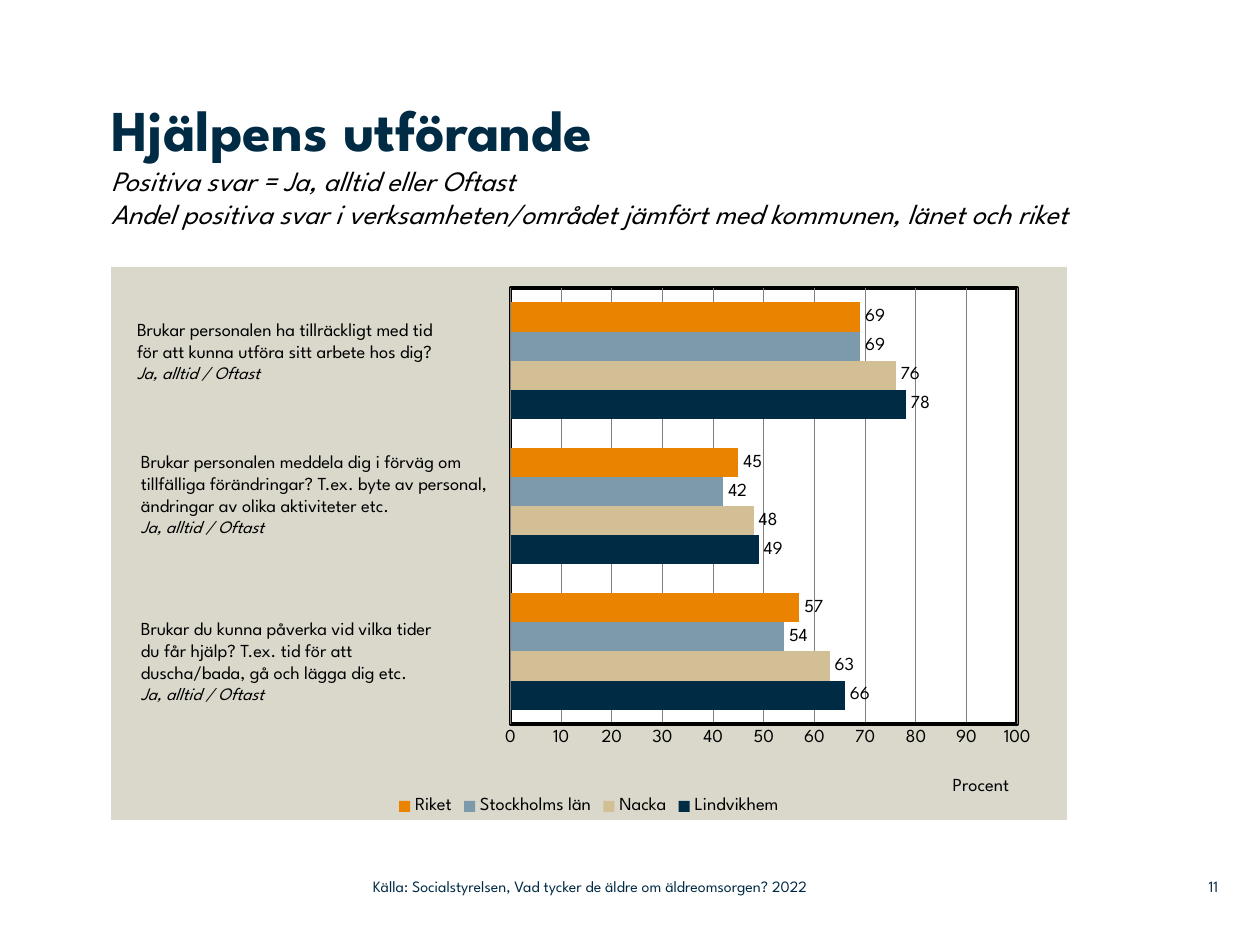
from lxml import etree
from pptx import Presentation
from pptx import util as u
from pptx.chart.data import CategoryChartData
from pptx.dml.color import RGBColor
from pptx.enum import chart as ch, text as t

PX = 914400 // 126
FONT = "League Spartan"
NAVY = RGBColor(0x00, 0x2B, 0x45)
BLACK = RGBColor(0, 0, 0)
GREY = RGBColor(0x80, 0x80, 0x80)
SAND = RGBColor(0xD3, 0xBF, 0x96)
BLUE = RGBColor(0x7D, 0x9A, 0xAA)
ORANGE = RGBColor(0xE9, 0x83, 0x00)
NS_C = "http://schemas.openxmlformats.org/drawingml/2006/chart"
NS_A = "http://schemas.openxmlformats.org/drawingml/2006/main"
C = "{%s}" % NS_C

deck = Presentation()
deck.slide_width, deck.slide_height = u.Inches(10), u.Inches(7.5)
slide = deck.slides.add_slide(deck.slide_layouts[6])


def put(lines, box, size=10.5, color=BLACK, pad=(0, 0), mid=False,
        right=False, first=None, last=None):
    """Add a text box; first and last override the format of those lines."""
    frame = slide.shapes.add_textbox(*[n * PX for n in box]).text_frame
    frame.word_wrap = True
    frame.margin_left = frame.margin_right = pad[0] * PX
    frame.margin_top = frame.margin_bottom = pad[1] * PX
    frame.vertical_anchor = t.MSO_ANCHOR.MIDDLE if mid else t.MSO_ANCHOR.TOP
    for i, line in enumerate(lines):
        para = frame.paragraphs[0] if i == 0 else frame.add_paragraph()
        para.alignment = t.PP_ALIGN.RIGHT if right else t.PP_ALIGN.LEFT
        look = {"size": u.Pt(size), "name": FONT}
        if i == 0:
            look.update(first or {})
        elif i == len(lines) - 1 or first:
            look.update(last or {})
        run = para.add_run()
        run.text = line
        for key, val in look.items():
            if key != "color":
                setattr(run.font, key, val)
        run.font.color.rgb = look.get("color", color)


def place(node, at, **spots):
    """Give a chart part a manual layout as shares of the chart."""
    for old in node.findall(C + "layout"):
        node.remove(old)
    layout = etree.Element(C + "layout")
    manual = etree.SubElement(layout, C + "manualLayout")
    for key, val in spots.items():
        etree.SubElement(manual, C + key).set("val", str(val))
    node.insert(at, layout)


# Heading
put(["Hjälpens utförande",
     "Positiva svar = Ja, alltid eller Oftast",
     "Andel positiva svar i verksamheten/området jämfört med kommunen, länet och riket"],
    (111, 94, 982, 153), size=16,
    first={"size": u.Pt(33), "bold": True, "color": NAVY},
    last={"italic": True})

# Chart data, listed from the bottom bar up
series = [
    ("Lindvikhem", (66, 49, 78), NAVY),
    ("Nacka", (63, 48, 76), SAND),
    ("Stockholms län", (54, 42, 69), BLUE),
    ("Riket", (57, 45, 69), ORANGE),
]
data = CategoryChartData()
data.categories = ["1", "2", "3"]
for name, vals, _ in series:
    data.add_series(name, vals)
chart = slide.shapes.add_chart(
    ch.XL_CHART_TYPE.BAR_CLUSTERED,
    *[n * PX for n in (111, 267, 956, 553)], data).chart
chart.has_title = False
chart.font.name, chart.font.size = FONT, u.Pt(10.5)
chart.font.color.rgb = BLACK

# Bars and their values
plot = chart.plots[0]
plot.gap_width, plot.overlap = 100, 0
plot.vary_by_categories = False
for bar, (_, _, color) in zip(plot.series, series):
    bar.format.fill.solid()
    bar.format.fill.fore_color.rgb = color
    tags = bar.data_labels
    tags.show_value = True
    tags.position = ch.XL_LABEL_POSITION.OUTSIDE_END
    tags.font.name, tags.font.size = FONT, u.Pt(10.5)
    tags.font.color.rgb = BLACK

# Axes
chart.category_axis.visible = False
axis = chart.value_axis
axis.minimum_scale, axis.maximum_scale, axis.major_unit = 0, 100, 10
axis.major_tick_mark = axis.minor_tick_mark = ch.XL_TICK_MARK.NONE
axis.format.line.color.rgb, axis.format.line.width = BLACK, u.Pt(2)
axis.has_major_gridlines = True
grid = axis.major_gridlines.format.line
grid.color.rgb, grid.width = GREY, u.Pt(0.75)
title = axis.axis_title
run = title.text_frame.paragraphs[0].add_run()
run.text = "Procent"
run.font.name, run.font.size, run.font.bold = FONT, u.Pt(10.5), False
run.font.color.rgb = BLACK
root = chart.element.find(C + "chart")
area = root.find(C + "plotArea")
place(area.find(C + "valAx").find(C + "title"), 1,
      xMode="edge", yMode="edge", x=0.877, y=0.915)

# Legend
chart.has_legend = True
chart.legend.position = ch.XL_LEGEND_POSITION.BOTTOM
chart.legend.include_in_layout = False
chart.legend.font.name, chart.legend.font.size = FONT, u.Pt(10.5)
chart.legend.font.color.rgb = BLACK

# Chart and plot backgrounds
place(area, 0, layoutTarget="inner", xMode="edge", yMode="edge",
      x=0.418, y=0.038, w=0.53, h=0.789)
SOLID = '<a:solidFill><a:srgbClr val="%s"/></a:solidFill>'
for fill, line, add in (
        ("DAD7CB", "<a:noFill/>", root.addnext),
        ("FFFFFF", SOLID % "000000", area.append)):
    add(etree.fromstring(
        f'<c:spPr xmlns:c="{NS_C}" xmlns:a="{NS_A}">{SOLID % fill}'
        f'<a:ln w="25400">{line}</a:ln></c:spPr>'))

# Questions beside the bars
asks = [
    ((125, 312, 374, 102), ["Brukar personalen ha tillräckligt med tid",
                            "för att kunna utföra sitt arbete hos dig?"]),
    ((129, 444, 377, 123), ["Brukar personalen meddela dig i förväg om tillfälliga "
                            "förändringar? T.ex. byte av personal, ändringar av "
                            "olika aktiviteter etc."]),
    ((129, 611, 374, 102), ["Brukar du kunna påverka vid vilka tider",
                            "du får hjälp? T.ex. tid för att",
                            "duscha/bada, gå och lägga dig etc."]),
]
for box, lines in asks:
    put(lines + ["Ja, alltid / Oftast"], box, pad=(12, 6),
        last={"size": u.Pt(10), "italic": True})

# Footer
put(["Källa: Socialstyrelsen, Vad tycker de äldre om äldreomsorgen? 2022"],
    (373, 868, 558, 37), size=9, color=NAVY, mid=True)
put(["11"], (1159, 868, 59, 37), size=9, color=NAVY, mid=True, right=True)

deck.save("out.pptx")
